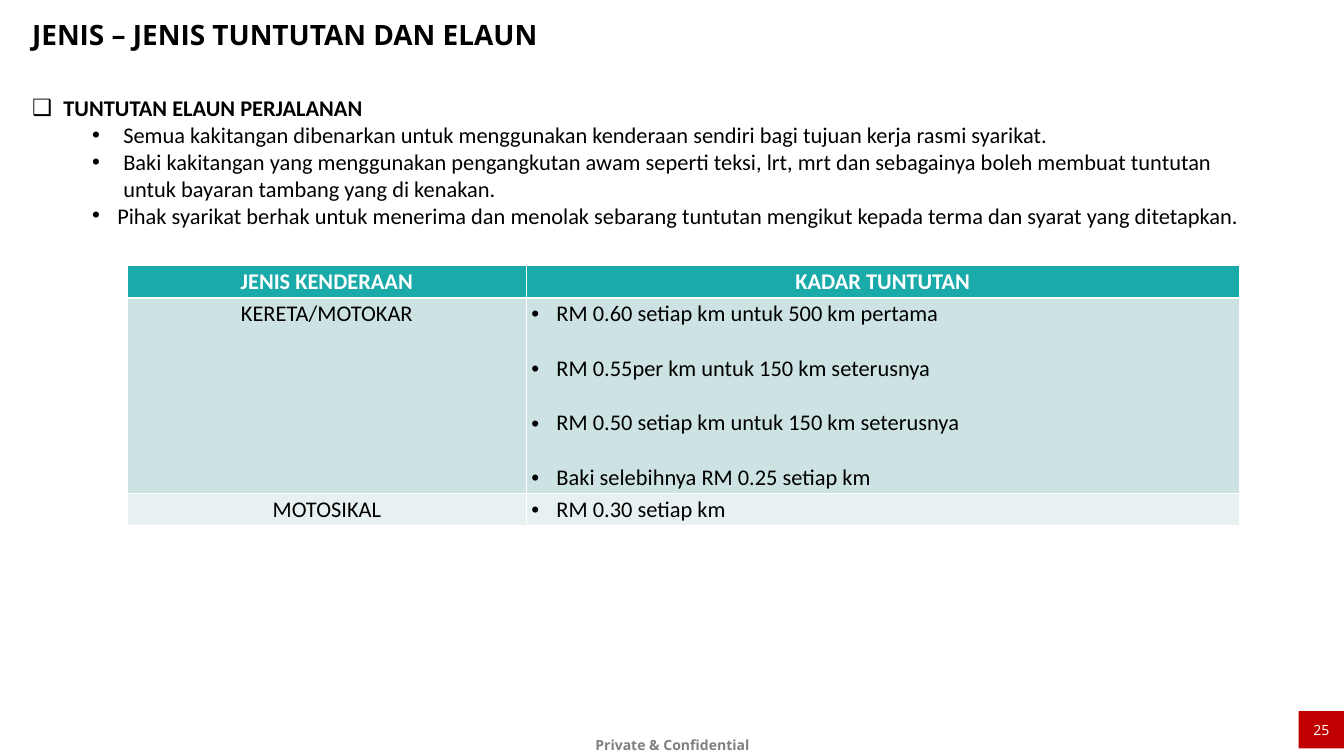
"""Build the travel allowance claims slide."""
from lxml.etree import SubElement
from pptx import Presentation
from pptx.dml.color import RGBColor
from pptx.enum.shapes import MSO_SHAPE
from pptx.enum.text import MSO_ANCHOR, PP_ALIGN
from pptx.oxml import parse_xml
from pptx.oxml.ns import nsdecls, qn
from pptx.util import Inches, Pt

WIDTH, HEIGHT = 26.67, 15
COLORS = {"black": "000000", "white": "FFFFFF", "grey": "808080", "red": "C00000",
          "teal": "1BAAAA", "band": "CDE2E2", "light": "E8F1F1"}
AREAS = {
    "footer": (43.23, 96.13, 13.61, 5.2),
    "number": (96.63, 94.07, 3.37, 4.93),
    "title": (2.02, 2, 86.35, 8.33),
    "rules": (2.02, 12.13, 91.49, 18.6),
    "rates": (9.49, 35.13, 82.72, 34),
}
TITLE = "JENIS – JENIS TUNTUTAN DAN ELAUN"
FOOTER = "Private & Confidential"
NUMBER = "25"
RULES = [
    ("TUNTUTAN ELAUN PERJALANAN", "❑", 0, 0.62, 0.62),
    ("Semua kakitangan dibenarkan untuk menggunakan kenderaan sendiri bagi tujuan kerja rasmi syarikat.",
     "•", 1, 1.81, 0.62),
    ("Baki kakitangan yang menggunakan pengangkutan awam seperti teksi, lrt, mrt dan sebagainya "
     "boleh membuat tuntutan untuk bayaran tambang yang di kenakan.", "•", 1, 1.81, 0.62),
    ("Pihak syarikat berhak untuk menerima dan menolak sebarang tuntutan mengikut kepada terma "
     "dan syarat yang ditetapkan.", "•", 1, 1.69, 0.5),
]
HEADERS = ["JENIS KENDERAAN", "KADAR TUNTUTAN"]
RATES = [
    ("KERETA/MOTOKAR", ["RM 0.60 setiap km untuk 500 km pertama",
                        "RM 0.55per km untuk 150 km seterusnya",
                        "RM 0.50 setiap km untuk 150 km seterusnya",
                        "Baki selebihnya RM 0.25 setiap km"]),
    ("MOTOSIKAL", ["RM 0.30 setiap km"]),
]
COLUMN_SHARES = [35.86, 64.14]
LINE_HEIGHT, CELL_PADDING = 0.54, 0.1


def area(name):
    left, top, width, height = AREAS[name]
    return [Inches(share * side / 100) for share, side in
            ((left, WIDTH), (top, HEIGHT), (width, WIDTH), (height, HEIGHT))]


def color(name):
    return RGBColor.from_string(COLORS[name])


def write(para, text, size=32, font="Calibri", ink="black", bold=False, align=PP_ALIGN.LEFT):
    para.text = text
    para.alignment = align
    para.font.size, para.font.name, para.font.bold = Pt(size), font, bold
    para.font.color.rgb = color(ink)


def add_bullet(para, mark, indent, hang):
    properties = para._p.get_or_add_pPr()
    properties.set("marL", str(Inches(indent)))
    properties.set("indent", str(-Inches(hang)))
    SubElement(properties, qn("a:buFont")).set("typeface", "Arial")
    SubElement(properties, qn("a:buChar")).set("char", mark)


def next_para(frame, index):
    return frame.add_paragraph() if index else frame.paragraphs[0]


def add_text(page, name):
    frame = page.shapes.add_textbox(*area(name)).text_frame
    frame.word_wrap = True
    return frame


def style_cell(cell, fill, bottom=1):
    cell.fill.solid()
    cell.fill.fore_color.rgb = color(fill)
    for index, (side, width) in enumerate(zip("LRTB", (1, 1, 1, bottom))):
        cell._tc.get_or_add_tcPr().insert(index, parse_xml(
            f'<a:ln{side} {nsdecls("a")} w="{Pt(width)}"><a:solidFill>'
            f'<a:srgbClr val="{COLORS["white"]}"/></a:solidFill></a:ln{side}>'))


def add_rates(page):
    table = page.shapes.add_table(len(RATES) + 1, len(HEADERS), *area("rates")).table
    total = area("rates")[2]
    for column, share in zip(table.columns, COLUMN_SHARES):
        column.width = int(total * share / 100)
    table.rows[0].height = Inches(LINE_HEIGHT + CELL_PADDING)
    for index, header in enumerate(HEADERS):
        cell = table.cell(0, index)
        style_cell(cell, "teal", bottom=3)
        write(cell.text_frame.paragraphs[0], header, ink="white", bold=True, align=PP_ALIGN.CENTER)
    for row, ((vehicle, rates), fill) in enumerate(zip(RATES, ("band", "light")), 1):
        table.rows[row].height = Inches((2 * len(rates) - 1) * LINE_HEIGHT + CELL_PADDING)
        kind, rate_cell = table.cell(row, 0), table.cell(row, 1)
        style_cell(kind, fill)
        style_cell(rate_cell, fill)
        write(kind.text_frame.paragraphs[0], vehicle, align=PP_ALIGN.CENTER)
        for index, rate in enumerate(rates):
            para = next_para(rate_cell.text_frame, index)
            if index:
                para.space_before = Inches(LINE_HEIGHT)
            add_bullet(para, "•", 0.5, 0.5)
            write(para, rate, align=PP_ALIGN.JUSTIFY)


def main():
    deck = Presentation()
    deck.slide_width, deck.slide_height = Inches(WIDTH), Inches(HEIGHT)
    page = deck.slides.add_slide(deck.slide_layouts[6])

    footer = add_text(page, "footer")
    footer.margin_left = footer.margin_right = Inches(0.24)
    footer.margin_top = footer.margin_bottom = Inches(0.12)
    footer.paragraphs[0].line_spacing = 1.2
    write(footer.paragraphs[0], FOOTER, 20, "Open Sans", "grey", True, PP_ALIGN.CENTER)

    badge = page.shapes.add_shape(MSO_SHAPE.RECTANGLE, *area("number"))
    badge.shadow.inherit = False
    badge.fill.solid()
    badge.fill.fore_color.rgb = color("red")
    badge.line.fill.background()
    frame = badge.text_frame
    frame.margin_left = frame.margin_right = 0
    frame.margin_top = frame.margin_bottom = Inches(0.2)
    frame.vertical_anchor = MSO_ANCHOR.MIDDLE
    write(frame.paragraphs[0], NUMBER, 20, "Open Sans", "white", align=PP_ALIGN.CENTER)

    write(add_text(page, "title").paragraphs[0], TITLE, 40, "Open Sans", bold=True)

    rules = add_text(page, "rules")
    for index, (text, mark, level, indent, hang) in enumerate(RULES):
        para = next_para(rules, index)
        para.level = level
        add_bullet(para, mark, indent, hang)
        write(para, text, bold=level == 0)

    add_rates(page)
    deck.save("out.pptx")


if __name__ == "__main__":
    main()
